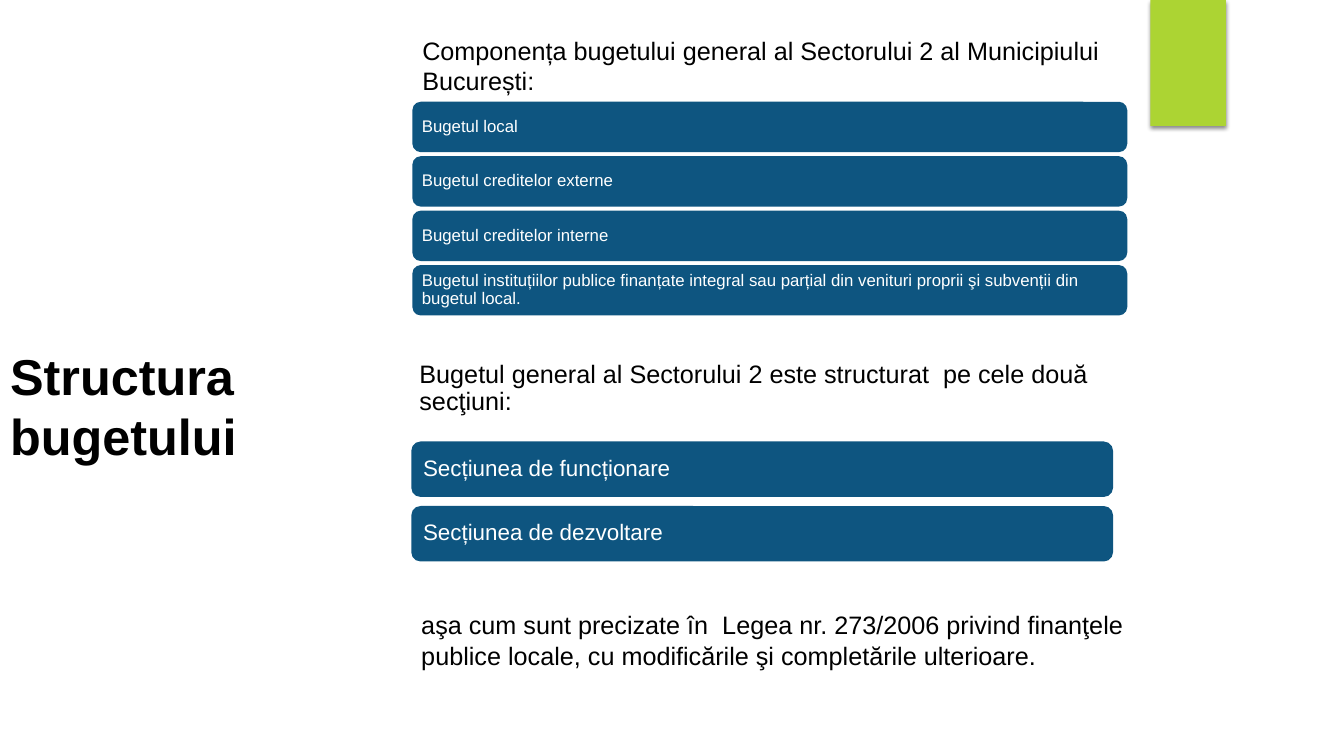
from lxml import etree
from pptx import Presentation
from pptx.dml.color import RGBColor
from pptx.enum.shapes import MSO_SHAPE
from pptx.enum.text import MSO_ANCHOR, MSO_AUTO_SIZE, PP_ALIGN
from pptx.oxml import parse_xml
from pptx.util import Pt

PX = 9144  # 100 px to the inch
COLORS = {"accent": "ACD433", "bar": "0E5580", "text": "000000", "bar_text": "FFFFFF"}


def write(sp, text, size, color, anchor=MSO_ANCHOR.TOP, inset=None, spacing=None, bold=False):
    tf = sp.text_frame
    tf.word_wrap = True
    tf.auto_size = MSO_AUTO_SIZE.NONE
    tf.vertical_anchor = anchor
    if inset is not None:
        tf.margin_left = tf.margin_right = inset * PX
        tf.margin_top = tf.margin_bottom = inset * PX
    p = tf.paragraphs[0]
    p.text = text
    p.alignment = PP_ALIGN.LEFT
    if spacing:
        p.line_spacing = spacing
    p.font.name = "Arial"
    p.font.size = Pt(size)
    p.font.bold = bold
    p.font.color.rgb = RGBColor.from_string(COLORS[color])


def add_block(shape, color, x, y, w, h):
    sp = s.shapes.add_shape(shape, x * PX, y * PX, w * PX, h * PX)
    sp.shadow.inherit = False
    sp.fill.solid()
    sp.fill.fore_color.rgb = RGBColor.from_string(COLORS[color])
    sp.line.fill.background()
    return sp


prs = Presentation()
prs.slide_width, prs.slide_height = 1333 * PX, 750 * PX
s = prs.slides.add_slide(prs.slide_layouts[5])

# Green tab with a soft shadow below
tab = add_block(MSO_SHAPE.RECTANGLE, "accent", 1141, 0, 75, 125)
effects = tab._element.spPr.find("{*}effectLst")
effects.append(parse_xml(
    '<a:outerShdw xmlns:a="http://schemas.openxmlformats.org/drawingml/2006/main" '
    'blurRad="38100" dist="25400" dir="5400000" rotWithShape="0">'
    '<a:srgbClr val="000000"><a:alpha val="45000"/></a:srgbClr></a:outerShdw>'))

# Title
title = s.shapes.title
title.left, title.top, title.width, title.height = 0, 277 * PX, 476 * PX, 250 * PX
write(title, "Structura bugetului", 36, "text", MSO_ANCHOR.MIDDLE, bold=True)

# Bars: left, top, width, height, step, font size, inset, labels
bar_groups = [
    (409, 101, 709, 50, 54, 12, 7, [
        "Bugetul local",
        "Bugetul creditelor externe",
        "Bugetul creditelor interne",
        "Bugetul instituțiilor publice finanțate integral sau parțial din venituri "
        "proprii şi subvenții din bugetul local.",
    ]),
    (408, 438, 696, 55, 64, 16, 9, [
        "Secțiunea de funcționare",
        "Secțiunea de dezvoltare",
    ]),
]
for x, y, w, h, step, size, inset, labels in bar_groups:
    for i, label in enumerate(labels):
        bar = add_block(MSO_SHAPE.ROUNDED_RECTANGLE, "bar", x, y + i * step, w, h)
        write(bar, label, size, "bar_text", MSO_ANCHOR.MIDDLE, inset, 0.9)

# Texts around the bars: left, top, width, height, anchor, inset, line spacing, text
notes = [
    (409, 30, 746, 101, MSO_ANCHOR.TOP, None, None,
     "Componența bugetului general al Sectorului 2 al Municipiului București:"),
    (409, 352, 696, 68, MSO_ANCHOR.MIDDLE, 7, 0.9,
     "Bugetul general al Sectorului 2 este structurat  pe cele două secţiuni:"),
    (408, 600, 736, 101, MSO_ANCHOR.TOP, None, None,
     "aşa cum sunt precizate în  Legea nr. 273/2006 privind finanţele publice locale, "
     "cu modificările şi completările ulterioare."),
]
for x, y, w, h, anchor, inset, spacing, text in notes:
    box = s.shapes.add_textbox(x * PX, y * PX, w * PX, h * PX)
    write(box, text, 18, "text", anchor, inset, spacing)

prs.save("out.pptx")
